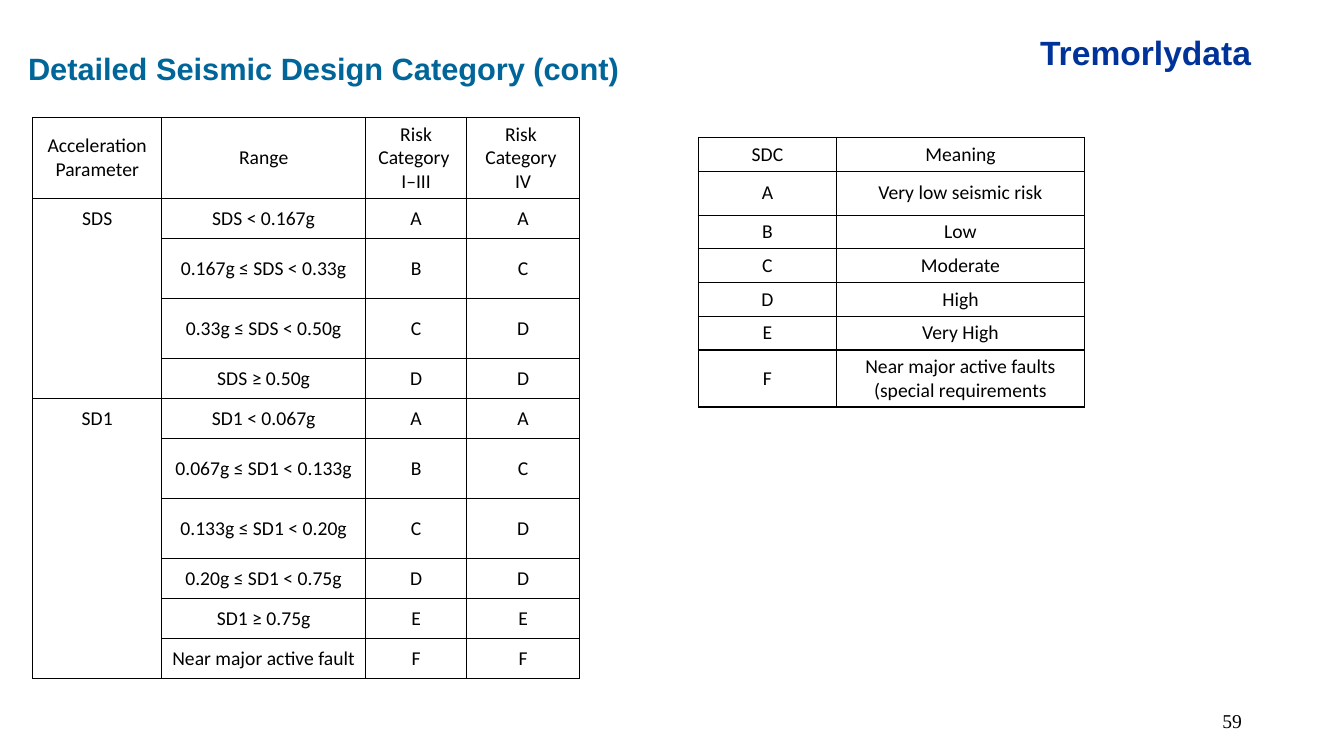
"""Builds the slide on detailed seismic design categories."""
import pptx
import pptx.dml.color
import pptx.enum.text
import pptx.oxml
import pptx.oxml.ns
import pptx.util

Pt = pptx.util.Pt
Align = pptx.enum.text.PP_ALIGN
Anchor = pptx.enum.text.MSO_ANCHOR
Fit = pptx.enum.text.MSO_AUTO_SIZE

THEME = {
    "ink": "000000", "brand": "003399", "title": "006699", "page": "010000",
    "head": "Arial", "body": "Calibri", "serif": "Times New Roman",
    "brand_size": 24, "title_size": 22, "cell_size": 14, "page_size": 14,
    "line": 1, "style": "{2D5ABB26-0587-4C30-8999-92F81FD0307C}",
}

LABELS = [
    {"text": "59", "box": (678.24, 500.4, 216, 28.8), "kind": "page",
     "face": "serif", "bold": False, "align": Align.RIGHT,
     "anchor": Anchor.MIDDLE, "fit": Fit.NONE},
    {"text": "Tremorlydata", "box": (735.84, 19.44, 169.2, 36), "kind": "brand",
     "face": "head", "bold": True, "align": Align.LEFT,
     "anchor": Anchor.TOP, "fit": Fit.SHAPE_TO_FIT_TEXT},
    {"text": "Detailed Seismic Design Category (cont)",
     "box": (12.96, 31.68, 442.08, 33.84), "kind": "title",
     "face": "head", "bold": True, "align": Align.LEFT,
     "anchor": Anchor.TOP, "fit": Fit.SHAPE_TO_FIT_TEXT},
]

LIMITS = {
    "spot": (23.4, 84), "cols": (92.1, 145.7, 72.1, 80.8),
    "heights": (58, 28.6, 42.8, 42.8, 28.6, 28.6, 42.8, 42.8, 28.6, 28.6, 28.6),
    "pad": (3, 3), "after": 0,
    "rows": [
        ("Acceleration Parameter", "Range", "Risk Category \nI–III",
         "Risk \nCategory \nIV"),
        ("SDS", "SDS < 0.167g", "A", "A"),
        ("", "0.167g ≤ SDS < 0.33g", "B", "C"),
        ("", "0.33g ≤ SDS < 0.50g", "C", "D"),
        ("", "SDS ≥ 0.50g", "D", "D"),
        ("SD1", "SD1 < 0.067g", "A", "A"),
        ("", "0.067g ≤ SD1 < 0.133g", "B", "C"),
        ("", "0.133g ≤ SD1 < 0.20g", "C", "D"),
        ("", "0.20g ≤ SD1 < 0.75g", "D", "D"),
        ("", "SD1 ≥ 0.75g", "E", "E"),
        ("", "Near major active fault", "F", "F"),
    ],
}

MEANINGS = {
    "spot": (498.9, 98.2), "cols": (98.6, 177.2),
    "heights": (24.1, 31.4, 24.1, 24.1, 24.1, 24.1, 40.7),
    "pad": (2, 2), "after": 2,
    "rows": [
        ("SDC", "Meaning"),
        ("A", "Very low seismic risk"),
        ("B", "Low"),
        ("C", "Moderate"),
        ("D", "High"),
        ("E", "Very High"),
        ("F", "Near major active faults (special requirements"),
    ],
}


def set_font(para, face, size, color, bold=False):
    """Set the type of a whole paragraph."""
    font = para.font
    font.name, font.size, font.bold = THEME[face], Pt(THEME[size]), bold
    font.color.rgb = pptx.dml.color.RGBColor.from_string(THEME[color])


def add_label(slide, label):
    """Add one line of text in a box."""
    box = slide.shapes.add_textbox(*map(Pt, label["box"]))
    frame = box.text_frame
    frame.auto_size = label["fit"]
    frame.word_wrap = label["fit"] == Fit.NONE
    frame.vertical_anchor = label["anchor"]
    para = frame.paragraphs[0]
    para.text, para.alignment = label["text"], label["align"]
    kind = label["kind"]
    set_font(para, label["face"], kind + "_size", kind, label["bold"])


def add_edges(cell, shown):
    """Draw the named sides of a cell and hide the rest."""
    props = cell._tc.get_or_add_tcPr()
    solid = f'<a:solidFill><a:srgbClr val="{THEME["ink"]}"/></a:solidFill>'
    for side in "LRTB":
        paint = solid if side in shown else "<a:noFill/>"
        props.append(pptx.oxml.parse_xml(
            f'<a:ln{side} {pptx.oxml.ns.nsdecls("a")} w="{Pt(THEME["line"])}">'
            f'{paint}</a:ln{side}>'))


def fill_cell(cell, text, data):
    """Write centred text into a cell."""
    cell.fill.background()
    cell.vertical_anchor = Anchor.MIDDLE
    cell.margin_top, cell.margin_bottom = map(Pt, data["pad"])
    para = cell.text_frame.paragraphs[0]
    for part, line in enumerate(text.split("\n")):
        if part:
            para.add_line_break()
        if line:
            para.add_run().text = line
    para.alignment = Align.CENTER
    para.space_after = Pt(data["after"])
    set_font(para, "body", "cell_size", "ink")


def add_grid(slide, data):
    """Add a ruled table; blank cells join the cell above."""
    rows, cols, heights = data["rows"], data["cols"], data["heights"]
    size = Pt(sum(cols)), Pt(sum(heights))
    table = slide.shapes.add_table(
        len(rows), len(cols), *map(Pt, data["spot"]), *size).table
    table.first_row = table.horz_banding = False
    table._tbl.tblPr.find(pptx.oxml.ns.qn("a:tableStyleId")).text = THEME["style"]
    for col, width in zip(table.columns, cols):
        col.width = Pt(width)
    for row, height in zip(table.rows, heights):
        row.height = Pt(height)
    for r, row in enumerate(rows):
        for c, text in enumerate(row):
            last = r + 1 == len(rows)
            shown = "LR"
            if text:
                shown += "T"
            if last or rows[r + 1][c]:
                shown += "B"
            cell = table.cell(r, c)
            add_edges(cell, shown)
            fill_cell(cell, text, data)


def main():
    """Build and save the deck."""
    deck = pptx.Presentation()
    deck.slide_width, deck.slide_height = Pt(960), Pt(540)
    slide = deck.slides.add_slide(deck.slide_layouts[6])
    for label in LABELS:
        add_label(slide, label)
    for data in (LIMITS, MEANINGS):
        add_grid(slide, data)
    deck.save("out.pptx")


if __name__ == "__main__":
    main()
